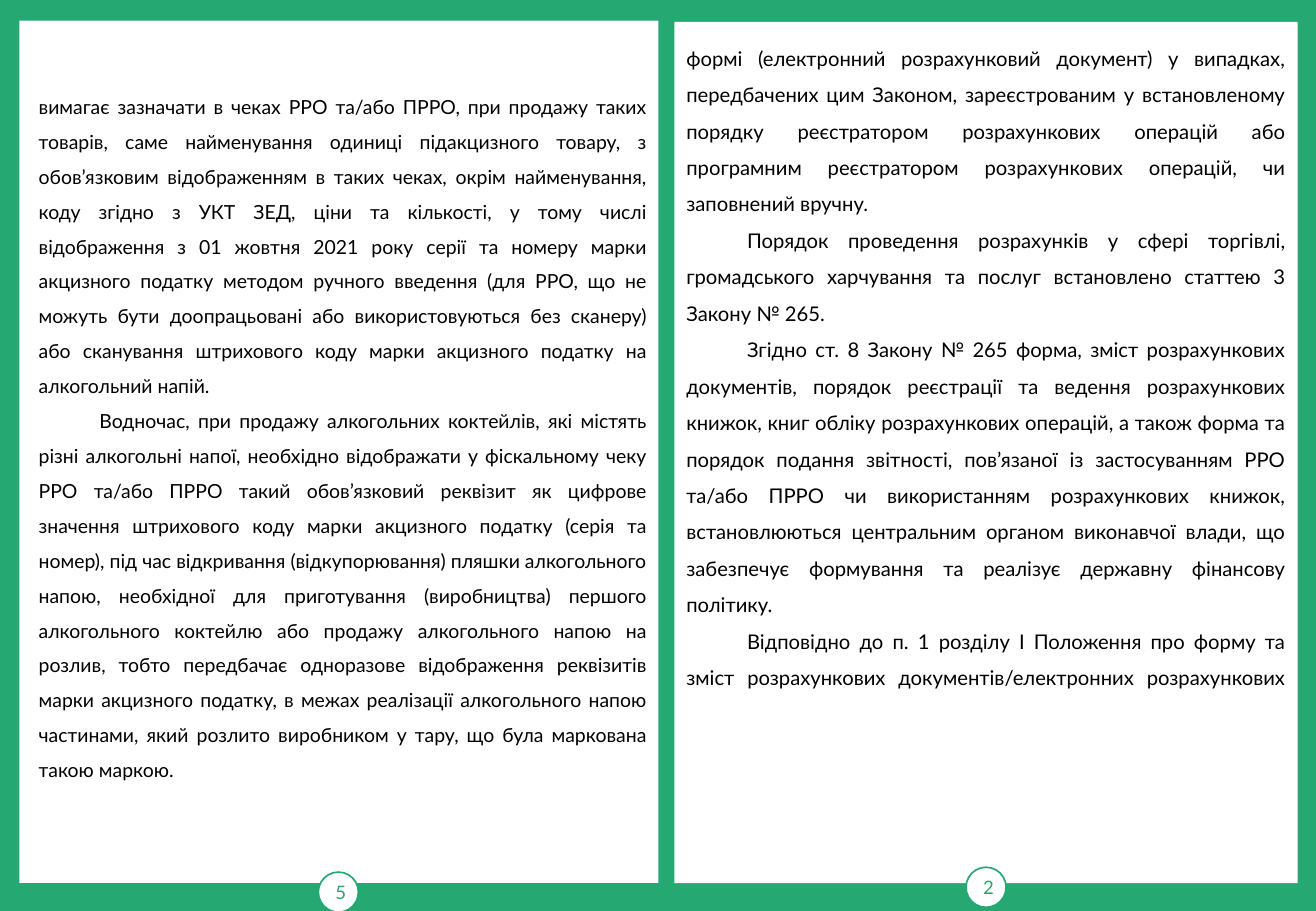
"""Build a green two-page booklet spread with numbered pages."""
import pptx
import pptx.dml.color
import pptx.enum.shapes
import pptx.enum.text
import pptx.util

PX = 9144
GREEN = pptx.dml.color.RGBColor(0x25, 0xA8, 0x72)
WHITE = pptx.dml.color.RGBColor(0xFF, 0xFF, 0xFF)
BLACK = pptx.dml.color.RGBColor(0x00, 0x00, 0x00)
SHAPE = pptx.enum.shapes.MSO_SHAPE
ANCHOR = pptx.enum.text.MSO_ANCHOR
ALIGN = pptx.enum.text.PP_ALIGN
INDENT = 50
BADGE = 33

LEFT_TEXT = [
    "вимагає зазначати в чеках РРО та/або ПРРО, при продажу таких товарів, "
    "саме найменування одиниці підакцизного товару, з обов’язковим "
    "відображенням в таких чеках, окрім найменування, коду згідно з УКТ ЗЕД, "
    "ціни та кількості, у тому числі відображення з 01 жовтня 2021 року серії "
    "та номеру марки акцизного податку методом ручного введення (для РРО, що "
    "не можуть бути доопрацьовані або використовуються без сканеру) або "
    "сканування штрихового коду марки акцизного податку на алкогольний напій.",
    "Водночас, при продажу алкогольних коктейлів, які містять різні "
    "алкогольні напої, необхідно відображати у фіскальному чеку РРО та/або "
    "ПРРО такий обов’язковий реквізит як цифрове значення штрихового коду "
    "марки акцизного податку (серія та номер), під час відкривання "
    "(відкупорювання) пляшки алкогольного напою, необхідної для приготування "
    "(виробництва) першого алкогольного коктейлю або продажу алкогольного "
    "напою на розлив, тобто передбачає одноразове відображення реквізитів "
    "марки акцизного податку, в межах реалізації алкогольного напою "
    "частинами, який розлито виробником у тару, що була маркована такою "
    "маркою.",
]
RIGHT_TEXT = [
    "формі (електронний розрахунковий документ) у випадках, передбачених цим "
    "Законом, зареєстрованим у встановленому порядку реєстратором "
    "розрахункових операцій або програмним реєстратором розрахункових "
    "операцій, чи заповнений вручну.",
    "Порядок проведення розрахунків у сфері торгівлі, громадського "
    "харчування та послуг встановлено статтею 3 Закону № 265.",
    "Згідно ст. 8 Закону № 265 форма, зміст розрахункових документів, "
    "порядок реєстрації та ведення розрахункових книжок, книг обліку "
    "розрахункових операцій, а також форма та порядок подання звітності, "
    "пов’язаної із застосуванням РРО та/або ПРРО чи використанням "
    "розрахункових книжок, встановлюються центральним органом виконавчої "
    "влади, що забезпечує формування та реалізує державну фінансову політику.",
    "Відповідно до п. 1 розділу I Положення про форму та зміст розрахункових "
    "документів/електронних розрахункових\n",
]


def box(*lengths):
    """Turn px lengths into EMU."""
    return [pptx.util.Emu(n * PX) for n in lengths]


def apply(obj, formats):
    """Set each attribute of obj from a dict of format values."""
    for name, value in formats.items():
        setattr(obj, name, value)


def set_font(p, size, color):
    """Give every run of a paragraph the slide's font."""
    for r in p.runs:
        apply(r.font, {"name": "Lato", "size": pptx.util.Pt(size)})
        r.font.color.rgb = color


def add_white_shape(group, kind, rect):
    """Add a plain white shape without a shadow or outline."""
    sp = group.shapes.add_shape(kind, *box(*rect))
    sp.shadow.inherit = False
    sp.fill.solid()
    sp.fill.fore_color.rgb = WHITE
    sp.line.fill.background()
    return sp


def add_page(s, rect, badge_at, number):
    """Add a white page grouped with its round number badge."""
    group = s.shapes.add_group_shape()
    add_white_shape(group, SHAPE.RECTANGLE, rect)
    sp = add_white_shape(group, SHAPE.OVAL, (*badge_at, BADGE, BADGE))
    sp.line.color.rgb = GREEN
    sp.line.width = pptx.util.Pt(1)
    tf = sp.text_frame
    apply(tf, {"vertical_anchor": ANCHOR.MIDDLE, "word_wrap": True,
               "margin_left": box(4)[0], "margin_right": 0})
    p = tf.paragraphs[0]
    apply(p, {"text": number, "alignment": ALIGN.CENTER})
    set_font(p, 11, GREEN)


def add_body(s, rect, texts, size, anchor):
    """Add justified text whose later paragraphs start with an indent."""
    tf = s.shapes.add_textbox(*box(*rect)).text_frame
    apply(tf, {"word_wrap": True, "vertical_anchor": anchor})
    for i, text in enumerate(texts):
        p = tf.add_paragraph() if i else tf.paragraphs[0]
        apply(p, {"text": text, "alignment": ALIGN.JUSTIFY,
                  "line_spacing": 1.5})
        if i:
            p._p.get_or_add_pPr().set("indent", str(INDENT * PX))
        set_font(p, size, BLACK)


def main():
    """Build and save the spread."""
    prs = pptx.Presentation()
    prs.slide_width, prs.slide_height = box(1083, 750)
    s = prs.slides.add_slide(prs.slide_layouts[6])
    s.background.fill.solid()
    s.background.fill.fore_color.rgb = GREEN
    add_page(s, (16, 17, 526, 710), (262, 718), "5")
    add_page(s, (555, 18, 513, 709), (795, 714), "2")
    add_body(s, (22, 17, 520, 678), LEFT_TEXT, 11.5, ANCHOR.MIDDLE)
    add_body(s, (555, 23, 513, 707), RIGHT_TEXT, 12, ANCHOR.TOP)
    prs.save("out.pptx")


if __name__ == "__main__":
    main()
